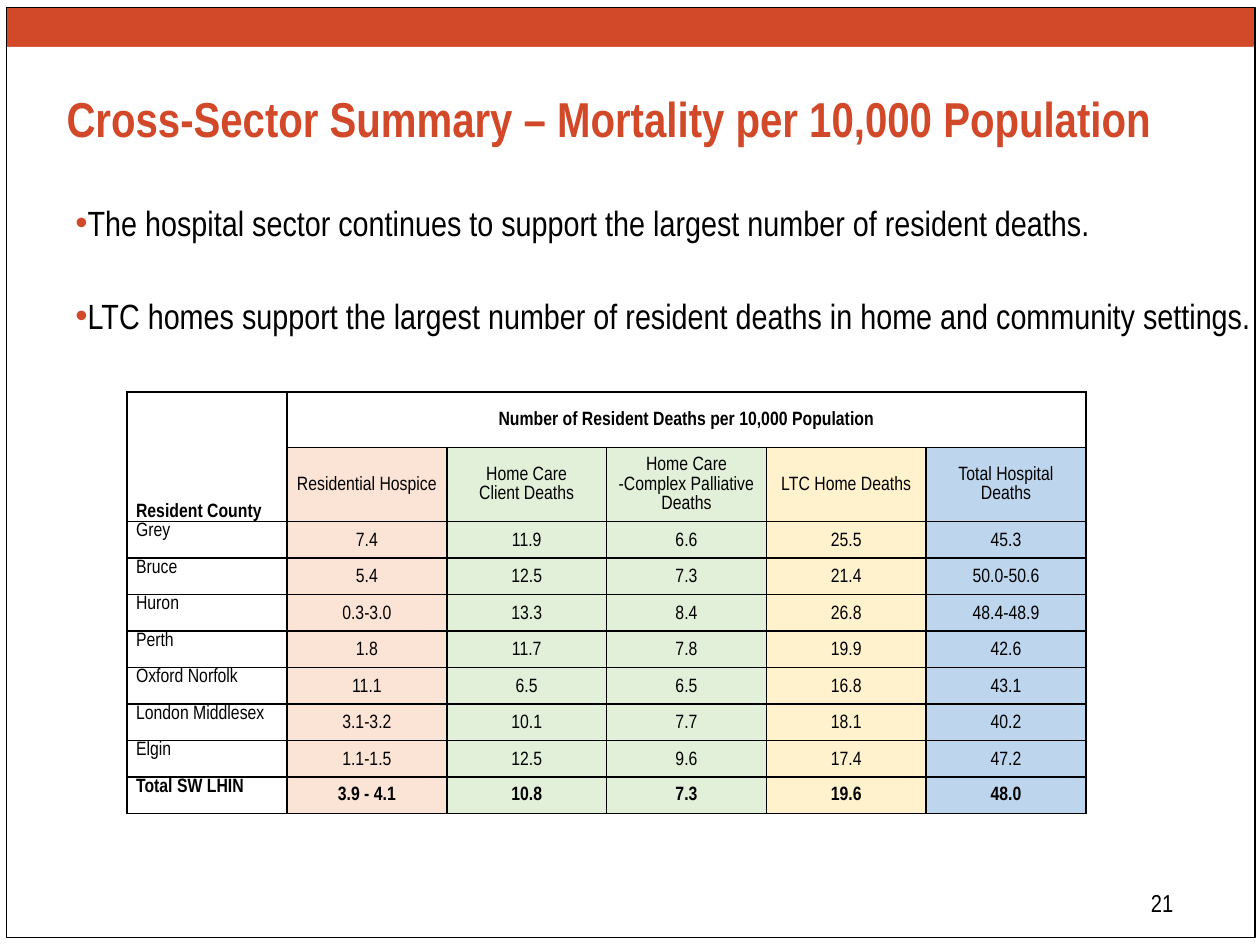
from lxml.etree import SubElement
from pptx import Presentation
from pptx.dml.color import RGBColor
from pptx.enum.shapes import MSO_SHAPE as SHAPE
from pptx.enum.text import MSO_ANCHOR as ANCHOR, PP_ALIGN as ALIGN
from pptx.oxml.ns import qn
from pptx.util import Inches, Pt

FONT, ACCENT, BLACK, WHITE = "Arial Narrow", "D2492A", "000000", "FFFFFF"
ORANGE, GREEN, YELLOW, BLUE = "FBE4D5", "E2EFD9", "FFF2CC", "BDD6EE"

TITLE = "Cross-Sector Summary – Mortality per 10,000 Population"
BULLETS = [
    "The hospital sector continues to support the largest number of resident deaths.",
    "LTC homes support the largest number of resident deaths in home and community settings.",
]
PAGE = "21"
CORNER = "Resident County"
SPAN_HEAD = "Number of Resident Deaths per 10,000 Population"
COLUMNS = [
    ("Residential Hospice", ORANGE),
    ("Home Care\nClient Deaths", GREEN),
    ("Home Care -Complex Palliative Deaths", GREEN),
    ("LTC Home Deaths", YELLOW),
    ("Total Hospital Deaths", BLUE),
]
COUNTIES = [
    ("Grey", "7.4", "11.9", "6.6", "25.5", "45.3"),
    ("Bruce", "5.4", "12.5", "7.3", "21.4", "50.0-50.6"),
    ("Huron", "0.3-3.0", "13.3", "8.4", "26.8", "48.4-48.9"),
    ("Perth", "1.8", "11.7", "7.8", "19.9", "42.6"),
    ("Oxford Norfolk", "11.1", "6.5", "6.5", "16.8", "43.1"),
    ("London Middlesex", "3.1-3.2", "10.1", "7.7", "18.1", "40.2"),
    ("Elgin", "1.1-1.5", "12.5", "9.6", "17.4", "47.2"),
]
TOTAL = ("Total SW LHIN", "3.9 - 4.1", "10.8", "7.3", "19.6", "48.0")

BARS = [(0.05, 0.06, 9.91, 0.31), (0.05, 0.06, 9.89, 0.31)]
FRAME = (0.05, 0.06, 9.91, 7.38)
TABLE_AT = (1.01, 3.11, 7.61, 3.36)
HEAD_ROWS, BODY_ROW = [0.44, 0.58], 0.29


def rgb(value):
    return RGBColor.from_string(value)


def inches(box):
    return [Inches(v) for v in box]


def add_rect(s, box, fill=None, line=None):
    sp = s.shapes.add_shape(SHAPE.RECTANGLE, *inches(box))
    sp.shadow.inherit = False
    if fill:
        sp.fill.solid()
        sp.fill.fore_color.rgb = rgb(fill)
    else:
        sp.fill.background()
    if line:
        sp.line.color.rgb = rgb(line)
        sp.line.width = Pt(0.75)
    else:
        sp.line.fill.background()


def write(tf, paragraphs, size, color=BLACK, bold=False, **formats):
    """Fill a text frame; formats are paragraph attributes."""
    for i, text in enumerate(paragraphs):
        p = tf.paragraphs[0] if i == 0 else tf.add_paragraph()
        for name, value in formats.items():
            setattr(p, name, value)
        r = p.add_run()
        r.text = text
        for name, value in {"name": FONT, "size": Pt(size), "bold": bold}.items():
            setattr(r.font, name, value)
        r.font.color.rgb = rgb(color)


def add_text(s, box, paragraphs, size, **formats):
    tf = s.shapes.add_textbox(*inches(box)).text_frame
    tf.word_wrap = True
    write(tf, paragraphs, size, **formats)
    return tf


def add_bullet(p):
    pPr = p._p.get_or_add_pPr()
    pPr.set("marL", str(Inches(0.25)))
    pPr.set("indent", str(Inches(0.25)))
    SubElement(SubElement(pPr, qn("a:buClr")), qn("a:srgbClr"), val=ACCENT)
    SubElement(pPr, qn("a:buFont"), typeface="Arial")
    SubElement(pPr, qn("a:buChar"), char="•")


def add_borders(cell):
    """Borders come before the fill in the cell properties."""
    tcPr = cell._tc.get_or_add_tcPr()
    for i, side in enumerate(("lnL", "lnR", "lnT", "lnB")):
        ln = SubElement(tcPr, qn("a:" + side), w=str(Pt(1)))
        SubElement(SubElement(ln, qn("a:solidFill")), qn("a:srgbClr"), val=BLACK)
        tcPr.insert(i, ln)


def fill_cell(cell, text, fill=None, bold=False, anchor=ANCHOR.MIDDLE,
              align=ALIGN.CENTER, spacing=1.07):
    cell.margin_left = cell.margin_right = Inches(0.07)
    cell.margin_top = cell.margin_bottom = 0
    cell.vertical_anchor = anchor
    write(cell.text_frame, text.split("\n"), 11, bold=bold,
          alignment=align, line_spacing=spacing)
    if fill:
        cell.fill.solid()
        cell.fill.fore_color.rgb = rgb(fill)
    else:
        cell.fill.background()


def add_death_table(s):
    body = COUNTIES + [TOTAL]
    heights = HEAD_ROWS + [BODY_ROW] * len(body)
    n_cols = len(COLUMNS) + 1
    table = s.shapes.add_table(len(heights), n_cols, *inches(TABLE_AT)).table
    table.first_row = table.horz_banding = False
    for col in table.columns:
        col.width = Inches(TABLE_AT[2] / n_cols)
    for row, height in zip(table.rows, heights):
        row.height = Inches(height)

    table.cell(0, 0).merge(table.cell(1, 0))
    table.cell(0, 1).merge(table.cell(0, n_cols - 1))
    fill_cell(table.cell(0, 0), CORNER, WHITE, True, ANCHOR.BOTTOM, ALIGN.LEFT)
    fill_cell(table.cell(0, 1), SPAN_HEAD, WHITE, True)
    for c, (head, fill) in enumerate(COLUMNS, 1):
        fill_cell(table.cell(1, c), head, fill)
    for r, (label, *values) in enumerate(body, len(HEAD_ROWS)):
        total = label == TOTAL[0]
        fill_cell(table.cell(r, 0), label, None, total, ANCHOR.TOP, ALIGN.LEFT)
        for c, (value, (_, fill)) in enumerate(zip(values, COLUMNS), 1):
            fill_cell(table.cell(r, c), value, fill, total,
                      spacing=1.07 if total else 1.15)
    for cell in table.iter_cells():
        add_borders(cell)


def main():
    prs = Presentation()
    prs.slide_width, prs.slide_height = Inches(10), Inches(7.5)
    s = prs.slides.add_slide(prs.slide_layouts[6])
    for bar in BARS:
        add_rect(s, bar, fill=ACCENT)
    add_rect(s, FRAME, line=BLACK)
    add_text(s, (7.33, 7, 2.08, 0.5), [PAGE], 14,
             alignment=ALIGN.RIGHT, space_before=Pt(4))
    add_text(s, (0.43, 0.65, 8.95, 1), [TITLE], 28, color=ACCENT, bold=True,
             space_before=Pt(8))
    add_death_table(s)
    tf = add_text(s, (0, 1.55, 11.01, 1.32), BULLETS, 20, space_before=Pt(5))
    tf.paragraphs[1].space_before = Pt(29)
    for p in tf.paragraphs:
        add_bullet(p)
    prs.save("out.pptx")


if __name__ == "__main__":
    main()
